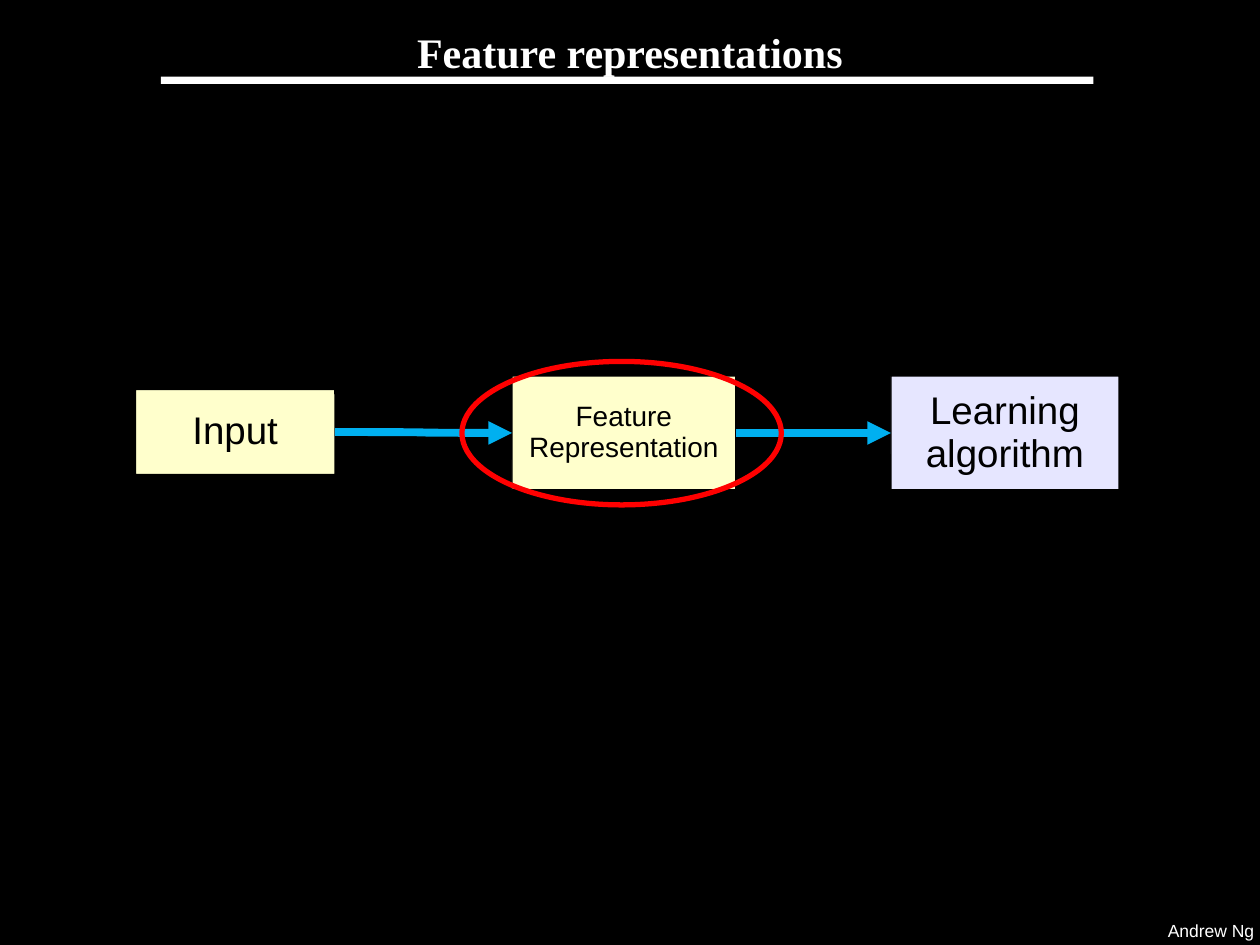
from dataclasses import dataclass

from lxml import etree
from pptx import Presentation
from pptx import util as u
from pptx.dml.color import RGBColor
from pptx.enum import shapes, text
from pptx.oxml import ns


@dataclass(frozen=True)
class Theme:
    background: str = "000000"
    light: str = "FFFFFF"
    dark: str = "000000"
    data_fill: str = "FFFFCC"
    learner_fill: str = "E6E6FF"
    arrow: str = "00B0F0"
    highlight: str = "FF0000"
    title_font: str = "Times New Roman"
    body_font: str = "Arial"
    title_size: float = 24
    large_size: float = 22
    medium_size: float = 16
    small_size: float = 10


THEME = Theme()
TOP, LEFT, BOTTOM, RIGHT = range(4)


def color(value):
    return RGBColor.from_string(value)


def points(*values):
    return [u.Pt(value) for value in values]


def write(shape, content, size, ink, font=THEME.body_font, bold=False,
          align=text.PP_ALIGN.CENTER, spacing=None):
    frame = shape.text_frame
    frame.text = content
    for paragraph in frame.paragraphs:
        paragraph.alignment = align
        if spacing:
            paragraph.line_spacing = spacing
        for run in paragraph.runs:
            run.font.name = font
            run.font.size = u.Pt(size)
            run.font.bold = bold
            run.font.color.rgb = color(ink)


def add_label(slide, bounds, content, size, wrap=True, **style):
    label = slide.shapes.add_textbox(*points(*bounds))
    label.text_frame.word_wrap = wrap
    write(label, content, size, THEME.light, **style)
    return label


def add_figure(slide, kind, bounds, fill=None, line=None, width=0.75):
    figure = slide.shapes.add_shape(kind, *points(*bounds))
    figure.shadow.inherit = False
    if fill:
        figure.fill.solid()
        figure.fill.fore_color.rgb = color(fill)
    else:
        figure.fill.background()
    if line:
        figure.line.color.rgb = color(line)
        figure.line.width = u.Pt(width)
    else:
        figure.line.fill.background()
    return figure


def add_stage(slide, bounds, content, size, fill):
    stage = add_figure(slide, shapes.MSO_SHAPE.ROUNDED_RECTANGLE, bounds,
                       fill, THEME.dark)
    stage.adjustments[0] = 0.002
    frame = stage.text_frame
    frame.word_wrap = True
    frame.vertical_anchor = text.MSO_ANCHOR.MIDDLE
    frame.margin_left = frame.margin_right = u.Pt(6.5)
    frame.margin_top = frame.margin_bottom = u.Pt(3)
    write(stage, content, size, THEME.dark, spacing=0.93)
    return stage


def add_arrow(slide, source, target):
    arrow = slide.shapes.add_connector(shapes.MSO_CONNECTOR.CURVE, 0, 0, 0, 0)
    arrow.begin_connect(source, RIGHT)
    arrow.end_connect(target, LEFT)
    arrow.line.color.rgb = color(THEME.arrow)
    arrow.line.width = u.Pt(4.5)
    # Arrowhead, and no shadow
    etree.SubElement(arrow.line._get_or_add_ln(), ns.qn("a:tailEnd"), type="triangle")
    etree.SubElement(arrow._element.spPr, ns.qn("a:effectLst"))


def main():
    presentation = Presentation()
    presentation.slide_width, presentation.slide_height = points(720, 540)
    slide = presentation.slides.add_slide(presentation.slide_layouts[6])
    slide.background.fill.solid()
    slide.background.fill.fore_color.rgb = color(THEME.background)

    # Author, title and its rule
    add_label(slide, (660.3, 522, 64.8, 19.4), "Andrew Ng", THEME.small_size,
              wrap=False, align=text.PP_ALIGN.LEFT)
    add_figure(slide, shapes.MSO_SHAPE.RECTANGLE, (92, 43.8, 532.8, 4.2), THEME.light)
    title = add_label(slide, (108, 17.3, 504, 24), "Feature representations",
                      THEME.title_size, font=THEME.title_font, bold=True)
    title.text_frame.vertical_anchor = text.MSO_ANCHOR.MIDDLE

    # Stages of the pipeline
    source = add_stage(slide, (77.4, 222.6, 114, 48.6), "Input",
                       THEME.large_size, THEME.data_fill)
    learner = add_stage(slide, (509.1, 214.9, 130.3, 65), "Learning\nalgorithm",
                        THEME.large_size, THEME.learner_fill)
    feature = add_stage(slide, (292.6, 214.9, 127.8, 65), "Feature Representation",
                        THEME.medium_size, THEME.data_fill)

    # Flow between the stages
    add_arrow(slide, source, feature)
    add_arrow(slide, feature, learner)

    # Ring around the feature stage
    add_figure(slide, shapes.MSO_SHAPE.OVAL, (264, 206.5, 182.5, 82),
               line=THEME.highlight, width=3)

    presentation.save("out.pptx")


if __name__ == "__main__":
    main()
